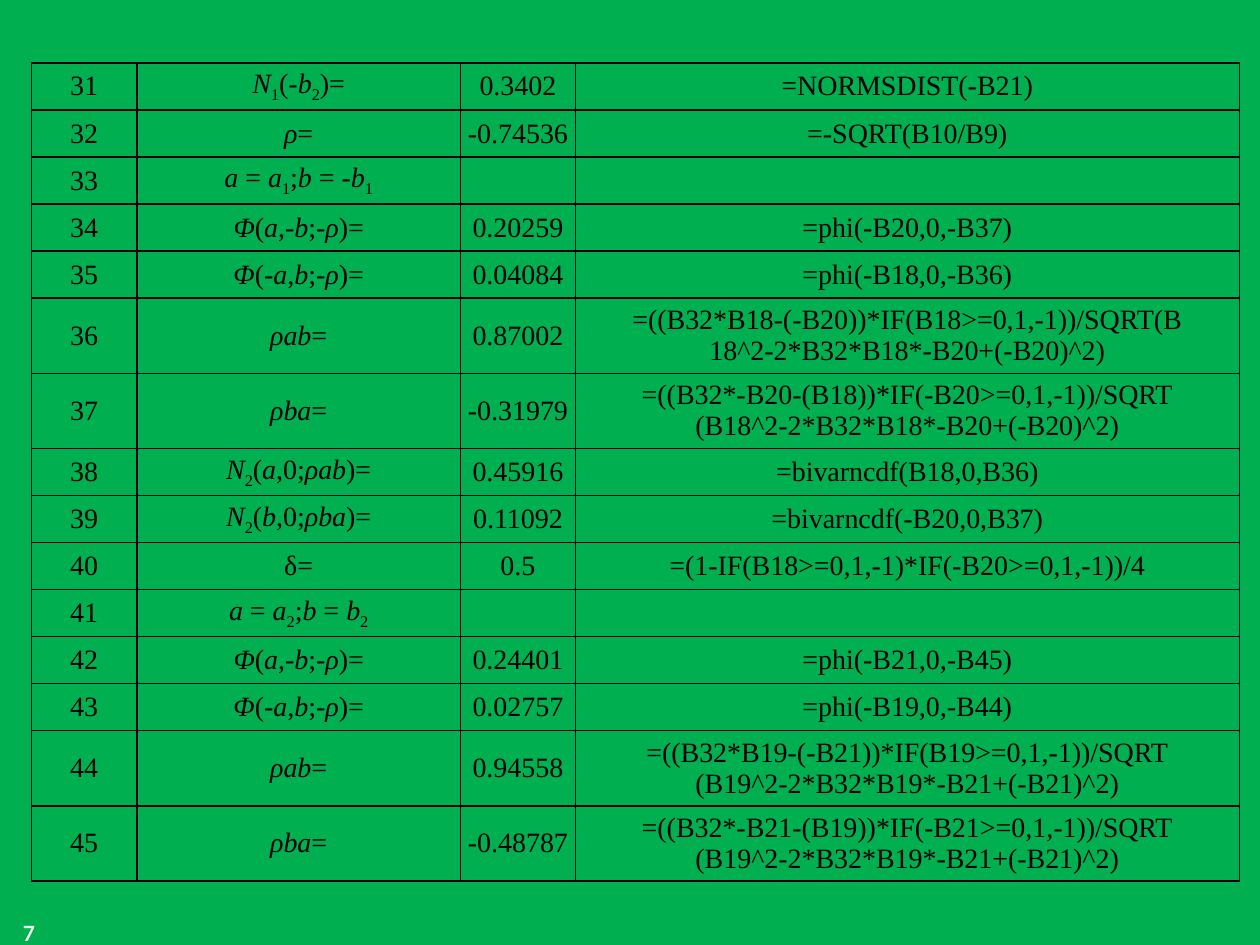
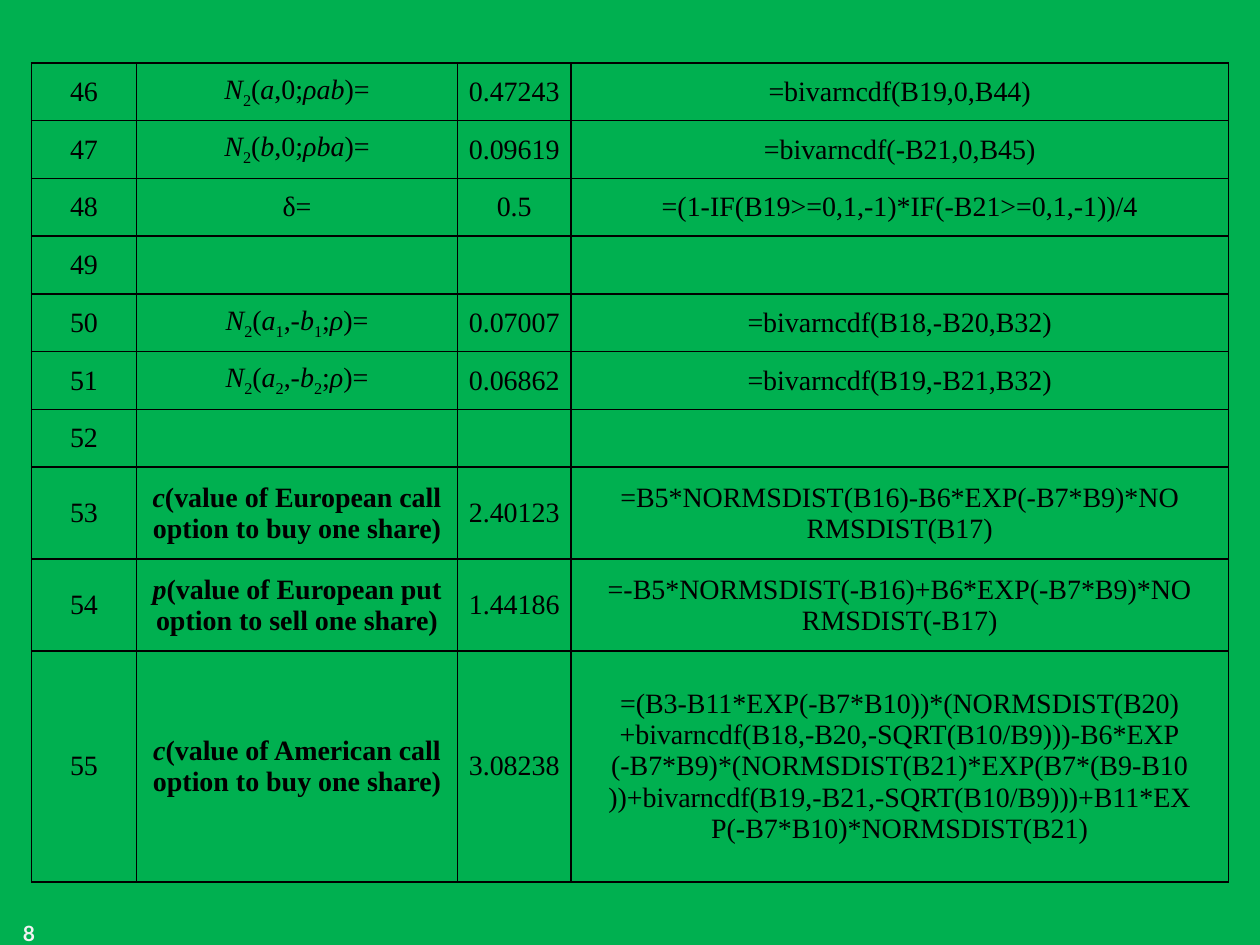
"""Build two spreadsheet-formula slides for option valuation."""
import itertools

import lxml.etree
import pptx
import pptx.dml.color
import pptx.enum.text
import pptx.oxml.ns
import pptx.util

Pt = pptx.util.Pt
GREEN, BLACK, PALE = "00B050", "000000", "F2F2F2"
ITALIC_SYMBOLS, SUBSCRIPTS = "NabρΦ", "12"

slides = [
    {
        "number": "7",
        "first_row": 31,
        "widths": [60.2, 185, 65.6, 379.4],
        "heights": [26.9] * 5 + [43] * 2 + [26.9] * 6 + [43] * 2,
        "rows": [
            ("N1(-b2)=", "0.3402", "=NORMSDIST(-B21)"),
            ("ρ=", "-0.74536", "=-SQRT(B10/B9)"),
            ("a = a1;b = -b1", "", ""),
            ("Φ(a,-b;-ρ)=", "0.20259", "=phi(-B20,0,-B37)"),
            ("Φ(-a,b;-ρ)=", "0.04084", "=phi(-B18,0,-B36)"),
            ("ρab=", "0.87002",
             "=((B32*B18-(-B20))*IF(B18>=0,1,-1))/SQRT(B|18^2-2*B32*B18*-B20+(-B20)^2)"),
            ("ρba=", "-0.31979",
             "=((B32*-B20-(B18))*IF(-B20>=0,1,-1))/SQRT|(B18^2-2*B32*B18*-B20+(-B20)^2)"),
            ("N2(a,0;ρab)=", "0.45916", "=bivarncdf(B18,0,B36)"),
            ("N2(b,0;ρba)=", "0.11092", "=bivarncdf(-B20,0,B37)"),
            ("δ=", "0.5", "=(1-IF(B18>=0,1,-1)*IF(-B20>=0,1,-1))/4"),
            ("a = a2;b = b2", "", ""),
            ("Φ(a,-b;-ρ)=", "0.24401", "=phi(-B21,0,-B45)"),
            ("Φ(-a,b;-ρ)=", "0.02757", "=phi(-B19,0,-B44)"),
            ("ρab=", "0.94558",
             "=((B32*B19-(-B21))*IF(B19>=0,1,-1))/SQRT|(B19^2-2*B32*B19*-B21+(-B21)^2)"),
            ("ρba=", "-0.48787",
             "=((B32*-B21-(B19))*IF(-B21>=0,1,-1))/SQRT|(B19^2-2*B32*B19*-B21+(-B21)^2)"),
        ],
    },
    {
        "number": "8",
        "first_row": 46,
        "widths": [60, 183.5, 64.8, 375.7],
        "heights": [33] * 7 + [52.6] * 2 + [131.8],
        "rows": [
            ("N2(a,0;ρab)=", "0.47243", "=bivarncdf(B19,0,B44)"),
            ("N2(b,0;ρba)=", "0.09619", "=bivarncdf(-B21,0,B45)"),
            ("δ=", "0.5", "=(1-IF(B19>=0,1,-1)*IF(-B21>=0,1,-1))/4"),
            ("", "", ""),
            ("N2(a1,-b1;ρ)=", "0.07007", "=bivarncdf(B18,-B20,B32)"),
            ("N2(a2,-b2;ρ)=", "0.06862", "=bivarncdf(B19,-B21,B32)"),
            ("", "", ""),
            ("c(value of European call option to buy one share)", "2.40123",
             "=B5*NORMSDIST(B16)-B6*EXP(-B7*B9)*NO|RMSDIST(B17)"),
            ("p(value of European put option to sell one share)", "1.44186",
             "=-B5*NORMSDIST(-B16)+B6*EXP(-B7*B9)*NO|RMSDIST(-B17)"),
            ("c(value of American call option to buy one share)", "3.08238",
             "=(B3-B11*EXP(-B7*B10))*(NORMSDIST(B20)"
             "|+bivarncdf(B18,-B20,-SQRT(B10/B9)))-B6*EXP"
             "|(-B7*B9)*(NORMSDIST(B21)*EXP(B7*(B9-B10"
             "|))+bivarncdf(B19,-B21,-SQRT(B10/B9)))+B11*EX"
             "|P(-B7*B10)*NORMSDIST(B21)"),
        ],
    },
]


def color(value):
    return pptx.dml.color.RGBColor.from_string(value)


def add_span(para, text, size=16, font="Times New Roman", ink=BLACK, bold=False, style="plain"):
    span = para.add_run()
    span.text = text
    span.font.size = Pt(size)
    span.font.name = font
    span.font.color.rgb = color(ink)
    span.font.bold = bold
    span.font.italic = style == "italic"
    if style == "subscript":
        span._r.get_or_add_rPr().set("baseline", "-25000")


deck = pptx.Presentation()
deck.slide_width, deck.slide_height = Pt(720), Pt(540)

for content in slides:
    page = deck.slides.add_slide(deck.slide_layouts[6])
    page.background.fill.solid()
    page.background.fill.fore_color.rgb = color(GREEN)

    widths, heights = content["widths"], content["heights"]
    table = page.shapes.add_table(len(heights), len(widths), Pt(18), Pt(36),
                                  Pt(sum(widths)), Pt(sum(heights))).table
    table.first_row = table.horz_banding = False
    for column, width in zip(table.columns, widths):
        column.width = Pt(width)
    for row, height in zip(table.rows, heights):
        row.height = Pt(height)

    for row_index, entries in enumerate(content["rows"]):
        row_number = str(content["first_row"] + row_index)
        for column_index, text in enumerate((row_number, *entries)):
            cell = table.cell(row_index, column_index)
            cell.vertical_anchor = pptx.enum.text.MSO_ANCHOR.MIDDLE
            cell.margin_left = cell.margin_right = Pt(1.5)
            cell.margin_top = cell.margin_bottom = 0
            properties = cell._tc.get_or_add_tcPr()
            for side in ("lnL", "lnR", "lnT", "lnB"):
                border = lxml.etree.SubElement(
                    properties, pptx.oxml.ns.qn(f"a:{side}"), w=str(Pt(1)))
                paint = lxml.etree.SubElement(border, pptx.oxml.ns.qn("a:solidFill"))
                lxml.etree.SubElement(paint, pptx.oxml.ns.qn("a:srgbClr"), val=BLACK)
            cell.fill.background()

            for line_index, line in enumerate(text.split("|")):
                frame = cell.text_frame
                para = frame.add_paragraph() if line_index else frame.paragraphs[0]
                para.alignment = pptx.enum.text.PP_ALIGN.CENTER
                if column_index == 1 and "value" in line:
                    add_span(para, line[0], bold=True, style="italic")
                    add_span(para, line[1:], bold=True)
                elif column_index == 1:
                    styles = ["italic" if symbol in ITALIC_SYMBOLS
                              else "subscript" if symbol in SUBSCRIPTS
                              else "plain" for symbol in line]
                    for style, group in itertools.groupby(zip(styles, line), lambda pair: pair[0]):
                        add_span(para, "".join(symbol for _, symbol in group), style=style)
                elif line:
                    add_span(para, line)

    box = page.shapes.add_textbox(Pt(6), Pt(522.5), Pt(168), Pt(29))
    box.text_frame.word_wrap = True
    add_span(box.text_frame.paragraphs[0], content["number"], 12, "Lato", PALE, bold=True)

deck.save("out.pptx")
